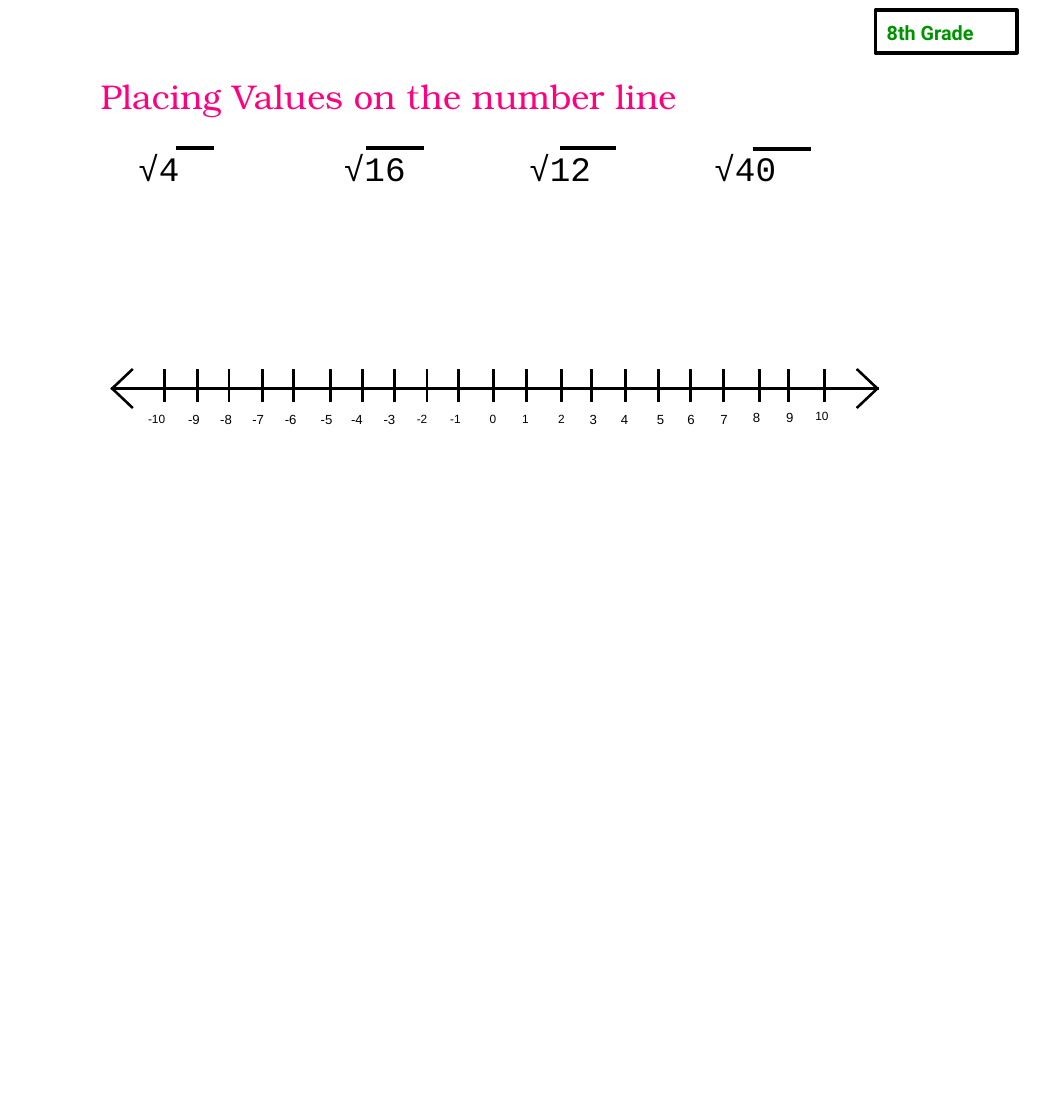
"""Build a worksheet slide on placing square roots on a number line."""
from dataclasses import dataclass

from lxml import etree
from pptx import Presentation
from pptx import util as u
from pptx.dml.color import RGBColor
from pptx.enum import shapes, text
from pptx.oxml.ns import qn

COLORS = {"title": "FF0080", "ink": "000000", "grade": "009300"}
AXIS_MIDDLE = 10.39
AXIS_LEFT, AXIS_RIGHT = 2.97, 23.5
TICK_TOP, TICK_HEIGHT, STROKE = 9.89, 0.86, 0.05


@dataclass(frozen=True)
class Caption:
    words: str
    left: float
    top: float
    width: float
    height: float
    size: float
    font: str
    color: str
    bold: bool = False


@dataclass(frozen=True)
class Mark:
    value: int
    tick_left: float
    label_left: float
    label_top: float = 10.87
    label_width: float = 1.27
    size: int = 10


@dataclass(frozen=True)
class RootBar:
    left: float
    right: float
    top: float


TITLE = Caption("Placing Values on the number line", 2.44, 1.88, 23.22, 1.37,
                26, "TeX Gyre Bonum", "title")
ROOTS = Caption("√4\t√16\t√12\t√40", 3.45, 3.81, 19.84, 1.37,
                26, "Courier New", "ink")
GRADE = Caption("8th Grade", 23.47, 0.43, 4.29, 0.89, 15, "Roboto", "grade", True)
ROOT_TABS = (5.5, 10.46, 15.41)
ROOT_BARS = (RootBar(4.7, 5.72, 3.96), RootBar(9.8, 11.35, 3.96),
             RootBar(14.99, 16.48, 3.96), RootBar(20.14, 21.69, 3.99))
MARKS = (
    Mark(-10, 4.37, 3.71, label_width=1.55, size=9),
    Mark(-9, 5.26, 4.78),
    Mark(-8, 6.1, 5.64),
    Mark(-7, 6.99, 6.5),
    Mark(-6, 7.82, 7.37),
    Mark(-5, 8.81, 8.33),
    Mark(-4, 9.68, 9.14),
    Mark(-3, 10.52, 10.01),
    Mark(-2, 11.4, 10.9, label_width=0.91, size=9),
    Mark(-1, 12.24, 11.79, label_width=1.19, size=9),
    Mark(0, 13.18, 12.85, label_width=1.07, size=9),
    Mark(1, 14.07, 13.72, label_width=1.19, size=9),
    Mark(2, 14.99, 14.68, label_width=0.91, size=9),
    Mark(3, 15.8, 15.52),
    Mark(4, 16.71, 16.36),
    Mark(5, 17.6, 17.32),
    Mark(6, 18.44, 18.14),
    Mark(7, 19.33, 19.02),
    Mark(8, 20.29, 19.89, 10.82),
    Mark(9, 21.06, 20.78, 10.82),
    Mark(10, 22.02, 21.56, 10.8, 1.55, 9),
)


def rgb(name: str) -> RGBColor:
    return RGBColor.from_string(COLORS[name])


def add_caption(slide, caption: Caption):
    box = slide.shapes.add_textbox(u.Cm(caption.left), u.Cm(caption.top),
                                   u.Cm(caption.width), u.Cm(caption.height))
    frame = box.text_frame
    frame.text = caption.words
    frame.word_wrap = True
    frame.auto_size = text.MSO_AUTO_SIZE.SHAPE_TO_FIT_TEXT
    font = frame.paragraphs[0].runs[0].font
    font.name = caption.font
    font.size = u.Pt(caption.size)
    font.bold = caption.bold
    font.color.rgb = rgb(caption.color)
    return frame.paragraphs[0]


def set_tabs(paragraph, stops: tuple[float, ...]) -> None:
    properties = paragraph._p.get_or_add_pPr()
    tab_list = etree.SubElement(properties, qn("a:tabLst"))
    for stop in stops:
        etree.SubElement(tab_list, qn("a:tab"), pos=str(int(u.Cm(stop))), algn="l")


def ink_solid(shape) -> None:
    shape.shadow.inherit = False
    shape.fill.solid()
    shape.fill.fore_color.rgb = rgb("ink")
    shape.line.color.rgb = rgb("ink")
    shape.line.width = u.Pt(0)


def add_rectangle(slide, left: float, top: float, width: float, height: float):
    return slide.shapes.add_shape(shapes.MSO_SHAPE.RECTANGLE, u.Cm(left), u.Cm(top),
                                  u.Cm(width), u.Cm(height))


def add_arrow_arm(slide, tip: float, across: int, down: int) -> None:
    offsets = ((0.03, -0.03), (0, 0), (0.56, 0.53), (0.59, 0.5))
    start, *others = [(u.Cm(tip + across * x), u.Cm(AXIS_MIDDLE + down * y))
                      for x, y in offsets]
    builder = slide.shapes.build_freeform(*start)
    builder.add_line_segments(others, close=True)
    ink_solid(builder.convert_to_shape())


def add_number_line(slide) -> None:
    ink_solid(add_rectangle(slide, AXIS_LEFT, AXIS_MIDDLE - STROKE / 2,
                            AXIS_RIGHT - AXIS_LEFT, STROKE))
    for tip, across in ((AXIS_LEFT, 1), (AXIS_RIGHT, -1)):
        for down in (-1, 1):
            add_arrow_arm(slide, tip, across, down)
    for mark in MARKS:
        ink_solid(add_rectangle(slide, mark.tick_left, TICK_TOP, STROKE, TICK_HEIGHT))
        add_caption(slide, Caption(str(mark.value), mark.label_left, mark.label_top,
                                   mark.label_width, 0.66, mark.size, "Arial", "ink"))


def add_root_bar(slide, bar: RootBar) -> None:
    line = slide.shapes.add_connector(shapes.MSO_CONNECTOR.STRAIGHT, u.Cm(bar.left),
                                      u.Cm(bar.top), u.Cm(bar.right), u.Cm(bar.top))
    line.line.color.rgb = rgb("ink")
    line.line.width = u.Pt(3)
    etree.SubElement(line._element.spPr, qn("a:effectLst"))


def add_grade_badge(slide) -> None:
    add_caption(slide, GRADE)
    border = add_rectangle(slide, 23.42, 0.28, 3.78, 1.13)
    border.shadow.inherit = False
    border.fill.background()
    border.line.color.rgb = rgb("ink")
    border.line.width = u.Pt(3)


def main() -> None:
    deck = Presentation()
    deck.slide_width, deck.slide_height = u.Cm(28.22), u.Cm(29.95)
    slide = deck.slides.add_slide(deck.slide_layouts[6])
    add_caption(slide, TITLE)
    add_number_line(slide)
    set_tabs(add_caption(slide, ROOTS), ROOT_TABS)
    for bar in ROOT_BARS:
        add_root_bar(slide, bar)
    add_grade_badge(slide)
    deck.save("out.pptx")


if __name__ == "__main__":
    main()
